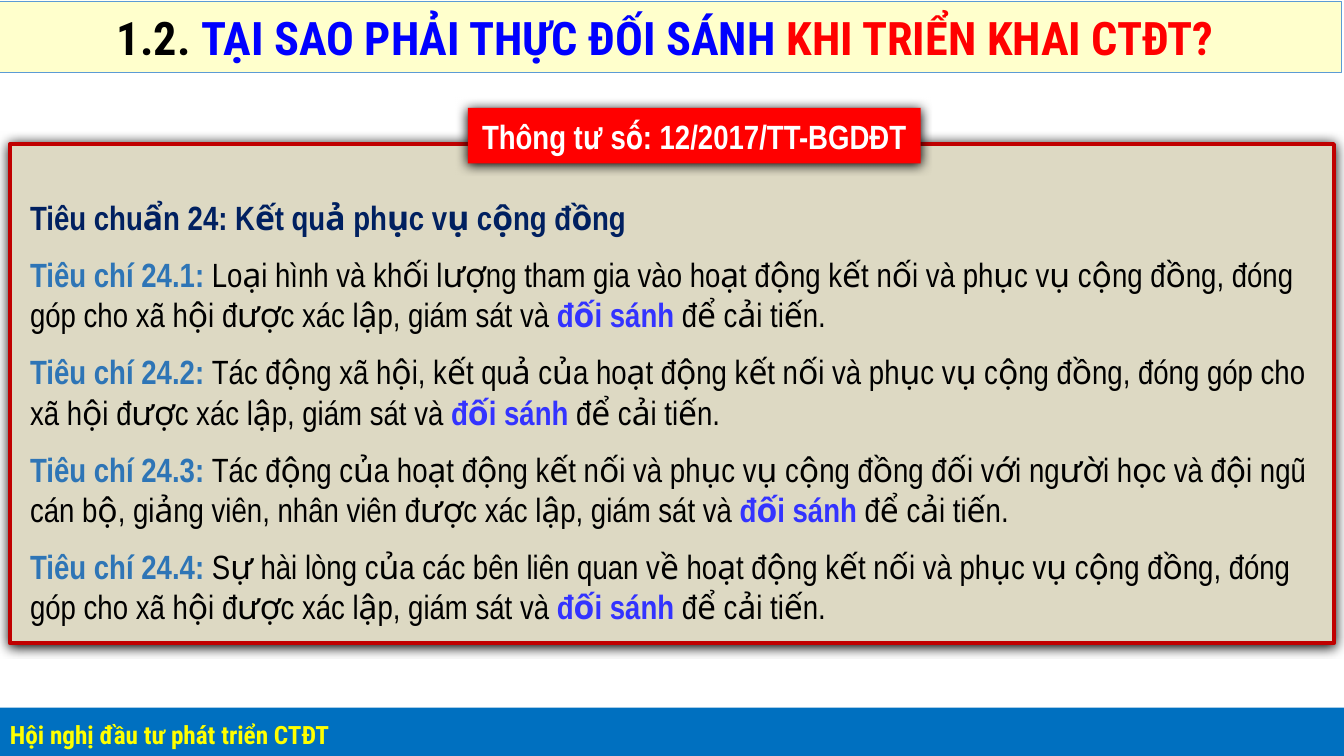
from pptx import Presentation
from pptx.dml.color import RGBColor
from pptx.enum import lang, shapes, text
from pptx.oxml import parse_xml
from pptx.oxml.ns import nsdecls, qn
from pptx.util import Inches, Pt

COLORS = {
    "cream": "FFFFCC", "sky": "5B9BD5", "black": "000000", "blue": "0000FF",
    "red": "FF0000", "bar": "0070C0", "yellow": "FFFF00", "sand": "DDD9C3",
    "crimson": "C00000", "white": "FFFFFF", "navy": "002060",
    "steel": "2E75B6", "violet": "3333FF",
}
SHADOW = (
    f'<a:outerShdw {nsdecls("a")} blurRad="107950" dist="12700" dir="5400000" '
    'algn="t" rotWithShape="0"><a:srgbClr val="000000"/></a:outerShdw>'
)

deck = Presentation()
deck.slide_width, deck.slide_height = Inches(13.33), Inches(7.5)
slide = deck.slides.add_slide(deck.slide_layouts[6])


def add_box(left, top, width, height, fill, line=None, weight=0, shadow=False):
    box = slide.shapes.add_shape(
        shapes.MSO_SHAPE.RECTANGLE,
        Inches(left), Inches(top), Inches(width), Inches(height))
    box.shadow.inherit = False
    box.fill.solid()
    box.fill.fore_color.rgb = RGBColor.from_string(COLORS[fill])
    if line:
        box.line.color.rgb = RGBColor.from_string(COLORS[line])
        box.line.width = Pt(weight)
    else:
        box.line.fill.background()
    if shadow:
        box._element.spPr.find(qn("a:effectLst")).append(parse_xml(SHADOW))
    return box


def add_text(shape, lines, font, size, align="LEFT", anchor="MIDDLE",
             before=0, after=0, space=None, tongue=None):
    """Fill a shape with lines, each a list of (words, colour, bold) runs."""
    frame = shape.text_frame
    frame.word_wrap = True
    frame.vertical_anchor = getattr(text.MSO_ANCHOR, anchor)
    for i, runs in enumerate(lines):
        para = frame.add_paragraph() if i else frame.paragraphs[0]
        para.alignment = getattr(text.PP_ALIGN, align)
        para.space_before, para.space_after = Pt(before), Pt(after)
        para.line_spacing = space
        for words, color, bold in runs:
            run = para.add_run()
            run.text = words
            run.font.name, run.font.size, run.font.bold = font, Pt(size), bold
            run.font.color.rgb = RGBColor.from_string(COLORS[color])
            run.font.language_id = tongue


title = add_box(-0.03, 0.01, 13.33, 0.71, "cream", "sky", 0.5)
add_text(title, [[
    ("1.2. ", "black", True),
    ("TẠI SAO PHẢI THỰC ĐỐI SÁNH ", "blue", True),
    ("KHI TRIỂN KHAI CTĐT?", "red", True),
]], "Roboto Condensed", 33)
title.text_frame.margin_left = Inches(1.19)

footer = add_box(0, 7.02, 13.33, 0.51, "bar")
add_text(footer, [[("Hội nghị đầu tư phát triển CTĐT", "yellow", True)]],
         "Roboto Condensed", 18, before=12, after=6, space=1.1)

add_box(0.1, 1.43, 13.13, 4.95, "sand", "crimson", 3, shadow=True)
label = add_box(4.64, 1.07, 4.49, 0.55, "red", shadow=True)
add_text(label, [[("Thông tư số: 12/2017/TT-BGDĐT", "white", True)]],
         "Arial Narrow", 24, align="CENTER")

social = "đóng góp cho xã hội được xác lập, giám sát và "
goals = [
    "Loại hình và khối lượng tham gia vào hoạt động kết nối và phục vụ cộng đồng, " + social,
    "Tác động xã hội, kết quả của hoạt động kết nối và phục vụ cộng đồng, " + social,
    "Tác động của hoạt động kết nối và phục vụ cộng đồng đối với người học và "
    "đội ngũ cán bộ, giảng viên, nhân viên được xác lập, giám sát và ",
    "Sự hài lòng của các bên liên quan về hoạt động kết nối và phục vụ cộng đồng, " + social,
]
lines = [[("Tiêu chuẩn 24: Kết quả phục vụ cộng đồng", "navy", True)]]
for num, goal in enumerate(goals, 1):
    lines.append([
        (f"Tiêu chí 24.{num}: ", "steel", True),
        (goal, "black", False),
        ("đối sánh ", "violet", True),
        ("để cải tiến.", "black", False),
    ])
body = slide.shapes.add_textbox(Inches(0.2), Inches(1.9), Inches(13.03), Inches(4.41))
add_text(body, lines, "Arial Narrow", 24, anchor="TOP", before=6, after=6,
         tongue=lang.MSO_LANGUAGE_ID.VIETNAMESE)

deck.save("out.pptx")
